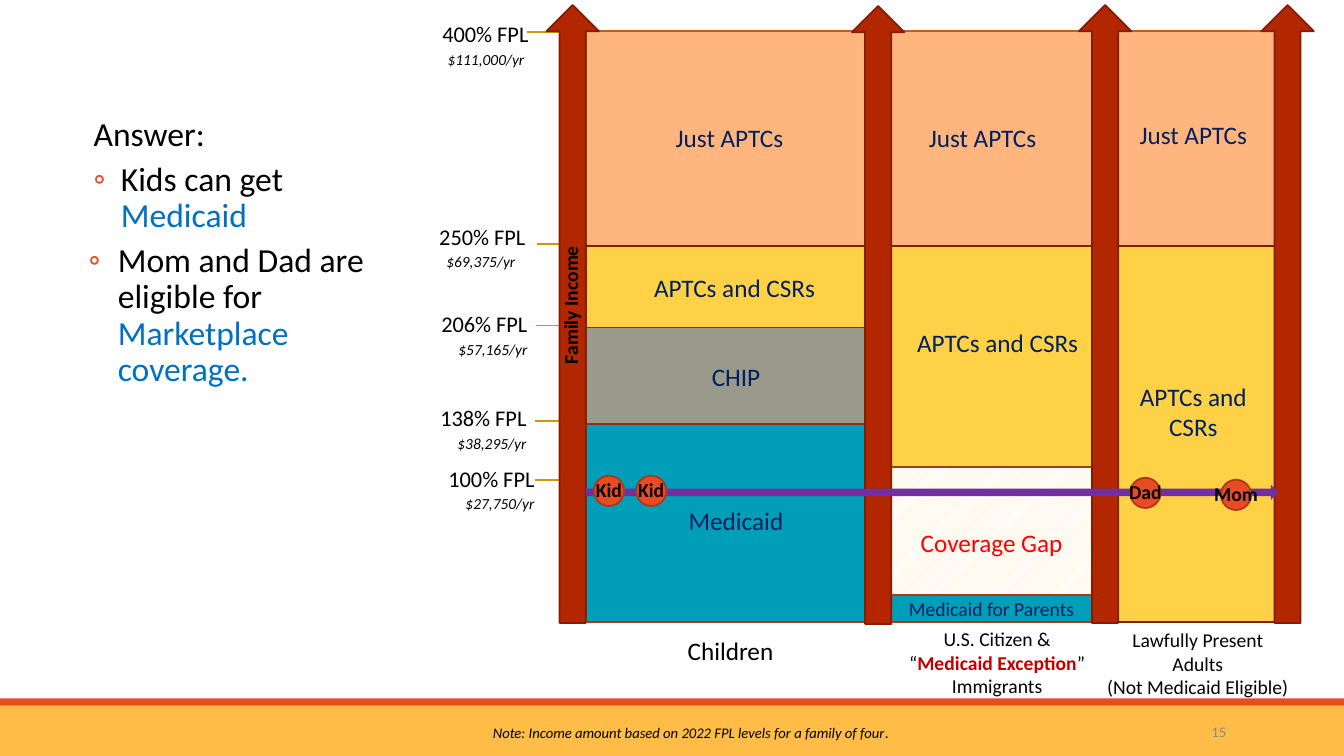
from lxml import etree
from pptx import Presentation
from pptx.dml.color import RGBColor
from pptx.enum.dml import MSO_PATTERN
from pptx.enum.shapes import MSO_CONNECTOR, MSO_SHAPE
from pptx.enum.text import MSO_ANCHOR, PP_ALIGN
from pptx.oxml.ns import qn
from pptx.util import Inches, Pt

LEFT, CENTER, RIGHT = PP_ALIGN.LEFT, PP_ALIGN.CENTER, PP_ALIGN.RIGHT
TOP, MIDDLE = MSO_ANCHOR.TOP, MSO_ANCHOR.MIDDLE
RECT, OVAL, CORNER = MSO_SHAPE.RECTANGLE, MSO_SHAPE.OVAL, MSO_SHAPE.CORNER
UP, ONWARD = MSO_SHAPE.UP_ARROW, MSO_SHAPE.RIGHT_ARROW
STRAIGHT = MSO_CONNECTOR.STRAIGHT
HATCH = MSO_PATTERN.LIGHT_UPWARD_DIAGONAL

BLACK = RGBColor(0, 0, 0)
WHITE = RGBColor(0xFF, 0xFF, 0xFF)
NAVY = RGBColor(0x00, 0x20, 0x60)
BLUE = RGBColor(0x00, 0x70, 0xC0)
RED = RGBColor(0xFF, 0, 0)
CRIMSON = RGBColor(0xC0, 0, 0)
GREY = RGBColor(0x8C, 0x8C, 0x8C)
AMBER = RGBColor(0xFF, 0xBD, 0x47)
ORANGE = RGBColor(0xE8, 0x4C, 0x22)
RUST = RGBColor(0xAC, 0x38, 0x19)
PEACH = RGBColor(0xFF, 0xB5, 0x7D)
PEACH_EDGE = RGBColor(0xBD, 0x62, 0x1D)
YELLOW = RGBColor(0xFF, 0xD1, 0x47)
MAROON = RGBColor(0x84, 0x1C, 0x00)
BRICK = RGBColor(0xB2, 0x26, 0x00)
TEAL = RGBColor(0x00, 0x9E, 0xB8)
STONE = RGBColor(0x9A, 0x9A, 0x8C)
STONE_EDGE = RGBColor(0x87, 0x36, 0x1C)
CREAM = RGBColor(0xFF, 0xE5, 0xB5)
PURPLE = RGBColor(0x70, 0x30, 0xA0)
GOLD = RGBColor(0xCC, 0x99, 0x00)

SLIDE_W, SLIDE_H = 13.33, 7.5
FOOTER_TOP, STRIPE = 7, 0.07
CHART_LEFT, CHART_RIGHT = 5.81, 12.68
CHART_W = CHART_RIGHT - CHART_LEFT
APTC_TOP, CSR_TOP, CHIP_TOP, MEDICAID_TOP, CHART_BOTTOM = 0.31, 2.44, 3.25, 4.15, 6.17
CHILD_W, ADULT_LEFT, ADULT_W = 2.98, 8.8, 2.07
GAP_TOP, PARENTS_TOP = 4.63, 5.9
ARROW_W, ARROW_H = 0.52, 6.13
TICK = 0.6
DOT, NAME_W, NAME_H = 0.3, 0.66, 0.34

answer = [
    ([("Answer:", {})], 0.05, 0),
    ([("Kids can get ", {}), ("Medicaid", {"color": BLUE})], 0.32, -0.27),
    ([("Mom and Dad are eligible for ", {}),
      ("Marketplace coverage.", {"color": BLUE})], 0.29, -0.29),
]
income_levels = [
    ("400% FPL", "$111,000/yr", 5.34, 0.21, 5.23, 0.32, 0.04),
    ("250% FPL", "$69,375/yr", 5.31, 2.22, 5.33, 2.42, 0.1),
    ("206% FPL", "$57,165/yr", 5.33, 3.09, 5.32, 3.23, 0),
    ("138% FPL", "$38,295/yr", 5.32, 4.02, 5.31, 4.18, 0),
    ("100% FPL", "$27,750/yr", 5.4, 4.62, 5.31, 4.76, 0),
]
income_arrows = [(5.42, 0.05), (8.45, 0.06), (10.7, 0.05), (12.51, 0.05)]
coverage_labels = [
    ("APTCs and CSRs", 6.04, 2.65, 2.49, 0.4),
    ("Just APTCs", 5.99, 1.16, 2.49, 0.4),
    ("APTCs and CSRs", 8.65, 3.2, 2.49, 0.4),
    ("Just APTCs", 8.5, 1.16, 2.49, 0.4),
    ("Just APTCs", 10.59, 1.13, 2.49, 0.4),
    ("APTCs and CSRs", 10.99, 3.73, 1.69, 0.71),
]
groups = [
    ([[("Children", {"size": 18})]], 5.7, 6.25, 3.09, 0.4),
    ([[("U.S. Citizen & “", {}), ("Medicaid Exception", {"color": CRIMSON, "bold": True}),
       ("” Immigrants", {})]], 8.91, 6.17, 1.96, 0.81),
    ([[("Lawfully Present Adults", {})], [("(Not Medicaid Eligible)", {})]],
     10.87, 6.18, 2.02, 0.81),
]
family = [("Kid", 5.89, 4.72), ("Kid", 6.31, 4.72), ("Dad", 11.21, 4.74), ("Mom", 12.11, 4.76)]

deck = Presentation()
deck.slide_width, deck.slide_height = Inches(SLIDE_W), Inches(SLIDE_H)
slide = deck.slides.add_slide(deck.slide_layouts[6])


def write(holder, paragraphs, size=18, color=BLACK, bold=False, italic=False,
          align=CENTER, anchor=TOP, spacing=None):
    frame = holder.text_frame
    frame.word_wrap = True
    frame.vertical_anchor = anchor
    if isinstance(paragraphs, str):
        paragraphs = [[(paragraphs, {})]]
    for index, runs in enumerate(paragraphs):
        paragraph = frame.add_paragraph() if index else frame.paragraphs[0]
        paragraph.alignment = align
        if spacing:
            paragraph.line_spacing = spacing
        for words, change in runs:
            run = paragraph.add_run()
            run.text = words
            font = run.font
            font.name = "Calibri"
            font.size = Pt(change.get("size", size))
            font.color.rgb = change.get("color", color)
            font.bold = change.get("bold", bold)
            font.italic = change.get("italic", italic)
    return frame.paragraphs


def label(paragraphs, x, y, w, h, **style):
    box = slide.shapes.add_textbox(Inches(x), Inches(y), Inches(w), Inches(h))
    write(box, paragraphs, **style)
    return box


def block(kind, x, y, w, h, fill, edge=None):
    shape = slide.shapes.add_shape(kind, Inches(x), Inches(y), Inches(w), Inches(h))
    shape.shadow.inherit = False
    shape.fill.solid()
    shape.fill.fore_color.rgb = fill
    if edge is None:
        shape.line.fill.background()
    else:
        shape.line.color.rgb = edge
        shape.line.width = Pt(1.25)
    return shape


def income_arrow(x, y):
    block(UP, x, y, ARROW_W, ARROW_H, BRICK, MAROON)


block(RECT, 0, FOOTER_TOP, SLIDE_W, SLIDE_H - FOOTER_TOP, AMBER)
block(RECT, 0, FOOTER_TOP - STRIPE, SLIDE_W, STRIPE, ORANGE)
label("15", 10.83, 7.06, 1.43, 0.4, size=10.5, color=GREY, align=RIGHT, anchor=MIDDLE)
label([[("Note: Income amount based on 2022 FPL levels for a family of four", {"italic": True}),
        (".", {"size": 11, "italic": True})]], 4.79, 7.12, 5.35, 0.29, size=10.5, align=LEFT)

answer_box = label([runs for runs, _, _ in answer], 0.78, 1.12, 2.95, 2.81,
                   size=24, align=LEFT, spacing=0.9)
for index, (_, margin, indent) in enumerate(answer):
    point = answer_box.text_frame.paragraphs[index]
    point.space_after = Pt(4)
    props = point._p.get_or_add_pPr()
    props.set("marL", str(Inches(margin)))
    props.set("indent", str(Inches(indent)))
    if index:
        point.space_before = Pt(2)
        tint = etree.SubElement(props, qn("a:buClr"))
        etree.SubElement(tint, qn("a:srgbClr")).set("val", str(ORANGE))
        etree.SubElement(props, qn("a:buFont")).set("typeface", "Calibri")
        etree.SubElement(props, qn("a:buChar")).set("char", "◦")

for level, income, right, top, tick_x, tick_y, inset in income_levels:
    tick = slide.shapes.add_connector(STRAIGHT, Inches(tick_x), Inches(tick_y),
                                      Inches(tick_x + TICK), Inches(tick_y))
    tick.line.color.rgb = GOLD
    tick.line.width = Pt(1.25)
    etree.SubElement(tick._element.spPr, qn("a:effectLst"))
    scale = label([[(level, {})], [(income, {"size": 11, "italic": True})]],
                  right - 1.5, top, 1.5, 0.52, size=16, align=RIGHT, spacing=Pt(15))
    scale.text_frame.paragraphs[1]._p.get_or_add_pPr().set("marR", str(Inches(inset)))

block(RECT, CHART_LEFT, APTC_TOP, CHART_W, CSR_TOP - APTC_TOP, PEACH, PEACH_EDGE)
csr = block(CORNER, CHART_LEFT, CSR_TOP, CHART_W, CHART_BOTTOM - CSR_TOP, YELLOW, MAROON)
csr.rotation = 180
csr.adjustments[0], csr.adjustments[1] = 0.36, 1.65
medicaid = block(RECT, CHART_LEFT, MEDICAID_TOP, CHILD_W, CHART_BOTTOM - MEDICAID_TOP, TEAL, RUST)
write(medicaid, "Medicaid", color=NAVY, anchor=MIDDLE)
gap = block(RECT, ADULT_LEFT, GAP_TOP, ADULT_W, 1.51, WHITE, RUST)
gap.fill.patterned()
gap.fill.pattern = HATCH
gap.fill.fore_color.rgb, gap.fill.back_color.rgb = CREAM, WHITE
write(gap, "Coverage Gap", color=RED, anchor=MIDDLE)
chip = block(RECT, CHART_LEFT, CHIP_TOP, CHILD_W, 0.96, STONE, STONE_EDGE)
write(chip, "CHIP", color=NAVY, anchor=MIDDLE)
parents = block(RECT, ADULT_LEFT, PARENTS_TOP, ADULT_W, CHART_BOTTOM - PARENTS_TOP, TEAL, RUST)
write(parents, "Medicaid for Parents", size=14, color=NAVY, anchor=MIDDLE)

for x, y in income_arrows:
    income_arrow(x, y)
axis_title = label("Family Income", 4.92, 2.76, 1.52, 0.38, size=14, bold=True, align=LEFT)
axis_title.rotation = 270
for words, *place in coverage_labels:
    label(words, *place, color=NAVY)
for words, *place in groups:
    label(words, *place, size=14)

block(ONWARD, CHART_LEFT, 4.81, CHART_W, 0.15, PURPLE)
for person, x, y in family:
    block(OVAL, x, y, DOT, DOT, ORANGE, RUST)
    label(person, x + (DOT - NAME_W) / 2, y - 0.03, NAME_W, NAME_H, size=14, bold=True)

deck.save("out.pptx")
